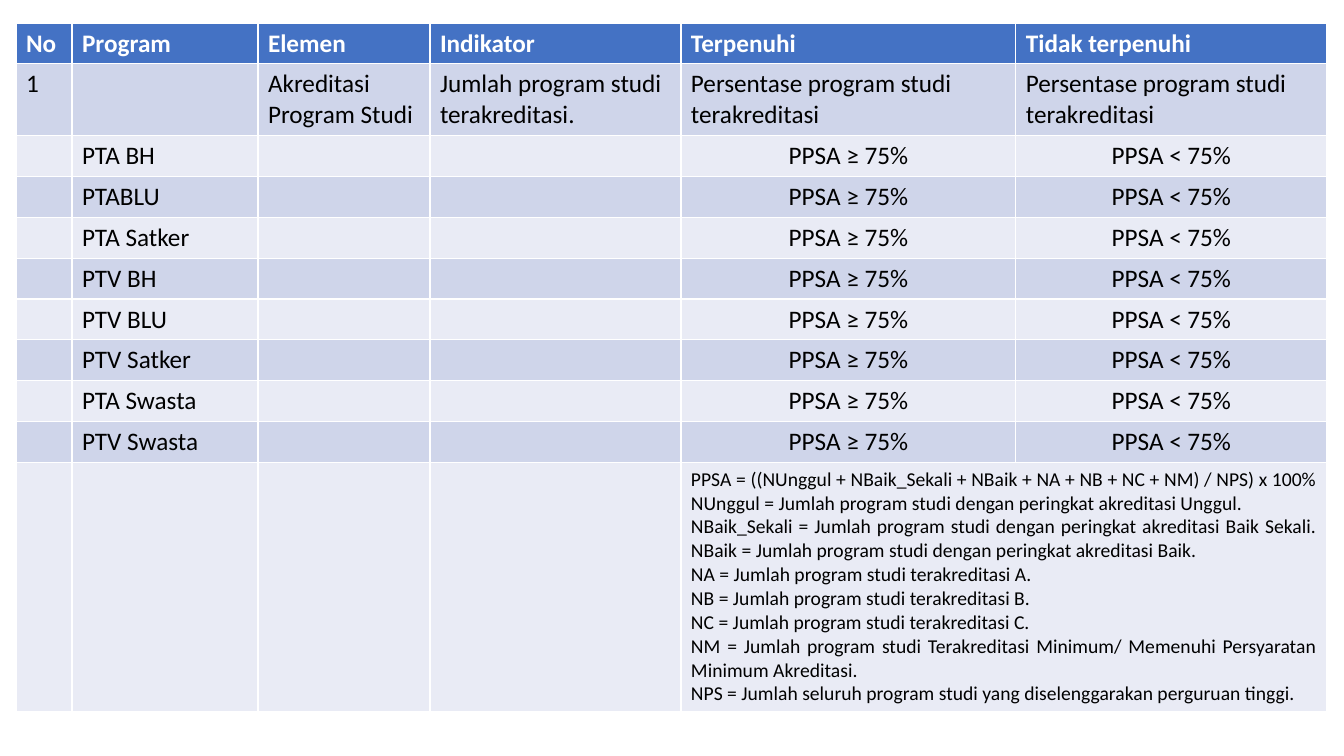
from pptx import Presentation
from pptx.dml.color import RGBColor
from pptx.enum.text import PP_ALIGN
from pptx.util import Pt

HEADINGS = ["No", "Program", "Elemen", "Indikator", "Terpenuhi", "Tidak terpenuhi"]
ACCREDITATION = [
    "1",
    "",
    "Akreditasi Program Studi",
    "Jumlah program studi terakreditasi.",
    "Persentase program studi terakreditasi",
    "Persentase program studi terakreditasi",
]
PROGRAMS = [
    "PTA BH", "PTABLU", "PTA Satker", "PTV BH",
    "PTV BLU", "PTV Satker", "PTA Swasta", "PTV Swasta",
]
FULFILLED, UNFULFILLED = "PPSA ≥ 75%", "PPSA < 75%"
DEFINITIONS = [
    "PPSA = ((NUnggul + NBaik_Sekali + NBaik + NA + NB + NC + NM) / NPS) x 100% "
    "NUnggul = Jumlah program studi dengan peringkat akreditasi Unggul.",
    "NBaik_Sekali = Jumlah program studi dengan peringkat akreditasi Baik Sekali. "
    "NBaik = Jumlah program studi dengan peringkat akreditasi Baik.",
    "NA = Jumlah program studi terakreditasi A.",
    "NB = Jumlah program studi terakreditasi B.",
    "NC = Jumlah program studi terakreditasi C.",
    "NM = Jumlah program studi Terakreditasi Minimum/ Memenuhi Persyaratan "
    "Minimum Akreditasi.",
    "NPS = Jumlah seluruh program studi yang diselenggarakan perguruan tinggi.",
]

COLORS = {
    "header": "4472C4",
    "odd": "CFD5EA",
    "even": "E9EBF5",
    "header_text": "FFFFFF",
    "text": "000000",
}
SLIDE_SIZE = (1344, 756)
LEFT, TOP, TABLE_HEIGHT = 16, 23, 678
COLUMN_WIDTHS = [56, 186, 172, 251, 335, 311]
ROW_HEIGHT = 38
CRITERIA_COLUMN = 4

HEADER = {"size": Pt(18), "bold": True, "color": "header_text", "align": PP_ALIGN.LEFT}
BODY = HEADER | {"bold": False, "color": "text"}
CRITERION = BODY | {"align": PP_ALIGN.CENTER}
DEFINITION = BODY | {"size": Pt(14), "align": PP_ALIGN.JUSTIFY}


def px(length):
    return round(length * 914400 / 100.8)


def color(key):
    return RGBColor.from_string(COLORS[key])


def write(cell, text, style):
    """Fill a cell with one paragraph per line of text, all in one style."""
    cell.text = text
    for paragraph in cell.text_frame.paragraphs:
        paragraph.alignment = style["align"]
        for run in paragraph.runs:
            for name in ("size", "bold"):
                setattr(run.font, name, style[name])
            run.font.name = "Calibri"
            run.font.color.rgb = color(style["color"])


def main():
    presentation = Presentation()
    presentation.slide_width, presentation.slide_height = map(px, SLIDE_SIZE)
    slide = presentation.slides.add_slide(presentation.slide_layouts[6])

    program_rows = [["", program, "", "", FULFILLED, UNFULFILLED] for program in PROGRAMS]
    definition_row = [""] * CRITERIA_COLUMN + ["\n".join(DEFINITIONS), ""]
    rows = [HEADINGS, ACCREDITATION, *program_rows, definition_row]
    last = len(rows) - 1

    frame = slide.shapes.add_table(
        len(rows), len(HEADINGS),
        px(LEFT), px(TOP), px(sum(COLUMN_WIDTHS)), px(TABLE_HEIGHT),
    )
    table = frame.table
    for column, width in zip(table.columns, COLUMN_WIDTHS):
        column.width = px(width)

    for r, texts in enumerate(rows):
        table.rows[r].height = px(ROW_HEIGHT)
        band = "header" if r == 0 else "odd" if r % 2 else "even"
        for c, text in enumerate(texts):
            cell = table.cell(r, c)
            cell.fill.solid()
            cell.fill.fore_color.rgb = color(band)
            if r == 0:
                style = HEADER
            elif r == last:
                style = DEFINITION
            elif r > 1 and c >= CRITERIA_COLUMN:
                style = CRITERION
            else:
                style = BODY
            if text:
                write(cell, text, style)

    table.cell(last, CRITERIA_COLUMN).merge(table.cell(last, CRITERIA_COLUMN + 1))
    frame.height = px(TABLE_HEIGHT)
    presentation.save("out.pptx")


if __name__ == "__main__":
    main()
